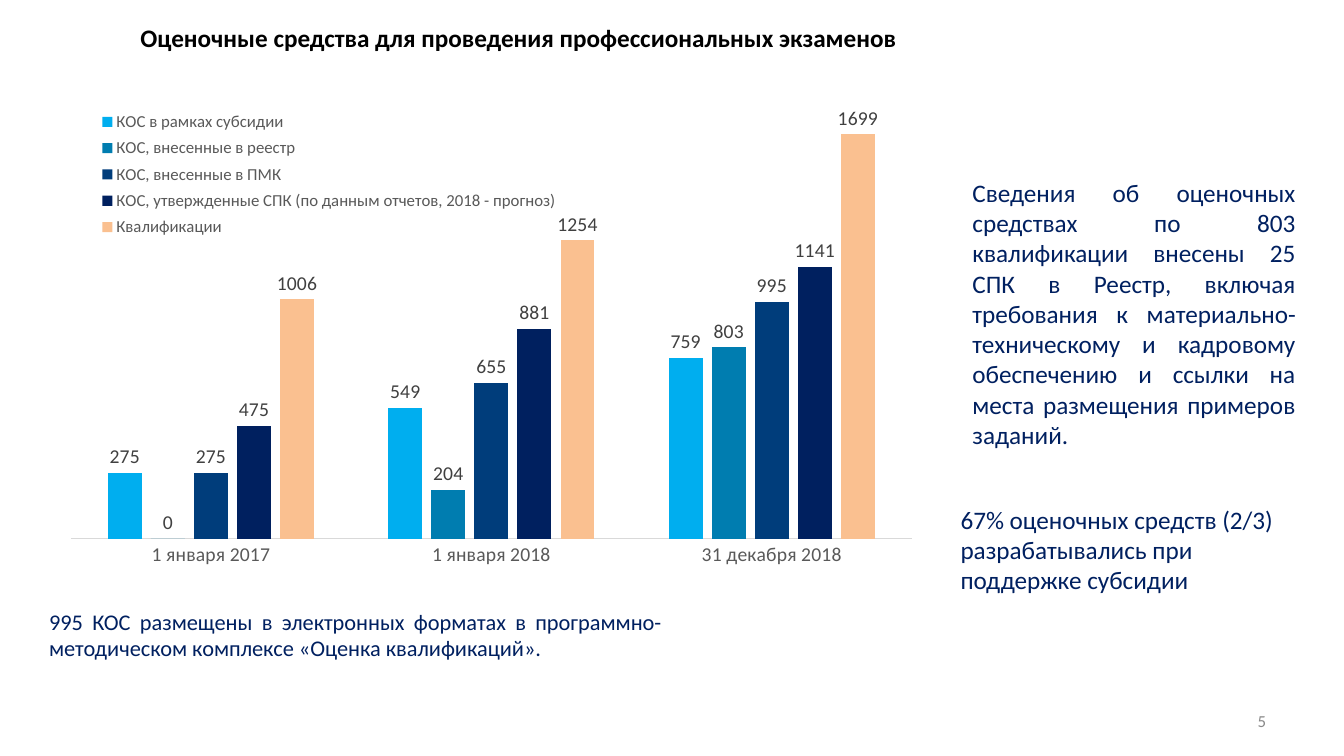
from lxml import etree
from pptx import Presentation
from pptx import util as u
from pptx.chart.data import CategoryChartData
from pptx.dml.color import RGBColor
from pptx.enum import chart as ch, text as t
from pptx.oxml.ns import qn

BLACK = RGBColor(0x00, 0x00, 0x00)
NAVY = RGBColor(0x00, 0x20, 0x60)
PAGE_GREY = RGBColor(0x89, 0x89, 0x89)
LABEL_GREY = RGBColor(0x40, 0x40, 0x40)
AXIS_GREY = RGBColor(0x59, 0x59, 0x59)
LINE_GREY = RGBColor(0xD9, 0xD9, 0xD9)
SKY = RGBColor(0x00, 0xAE, 0xEF)
TEAL = RGBColor(0x00, 0x7D, 0xB0)
BLUE = RGBColor(0x00, 0x3D, 0x7B)
DEEP = RGBColor(0x00, 0x20, 0x5F)
PEACH = RGBColor(0xFA, 0xC0, 0x90)

DATES = ["1 января 2017", "1 января 2018", "31 декабря 2018"]
TOOLS = [
    ("КОС в рамках субсидии", (275, 549, 759), SKY),
    ("КОС, внесенные в реестр", (0, 204, 803), TEAL),
    ("КОС, внесенные в ПМК", (275, 655, 995), BLUE),
    ("КОС, утвержденные СПК (по данным отчетов, 2018 - прогноз)", (475, 881, 1141), DEEP),
    ("Квалификации", (1006, 1254, 1699), PEACH),
]


class SlideBuilder:
    face = "Calibri"

    def __init__(self, slide):
        self.slide = slide

    def style(self, font, size, color, bold=False):
        font.name, font.size, font.bold = self.face, u.Pt(size), bold
        font.color.rgb = color

    def fill_text(self, holder, words, size, color, align, anchor, bold=False):
        frame = holder.text_frame
        frame.word_wrap = True
        frame.auto_size = t.MSO_AUTO_SIZE.NONE
        frame.vertical_anchor = anchor
        paragraph = frame.paragraphs[0]
        paragraph.alignment = align
        run = paragraph.add_run()
        run.text = words
        self.style(run.font, size, color, bold)

    def title(self, words, left, top, width, height):
        heading = self.slide.shapes.title
        heading.left, heading.top = u.Pt(left), u.Pt(top)
        heading.width, heading.height = u.Pt(width), u.Pt(height)
        self.fill_text(heading, words, 18, BLACK, t.PP_ALIGN.LEFT, t.MSO_ANCHOR.TOP, True)

    def note(self, words, left, top, width, height, size=18, color=NAVY,
             align=t.PP_ALIGN.JUSTIFY, anchor=t.MSO_ANCHOR.TOP):
        box = self.slide.shapes.add_textbox(*map(u.Pt, (left, top, width, height)))
        self.fill_text(box, words, size, color, align, anchor)

    def place(self, part, index, **fractions):
        for old in part.findall(qn("c:layout")):
            part.remove(old)
        layout = etree.Element(qn("c:layout"))
        part.insert(index, layout)
        manual = etree.SubElement(layout, qn("c:manualLayout"))
        if part.tag == qn("c:plotArea"):
            etree.SubElement(manual, qn("c:layoutTarget")).set("val", "inner")
        for mode in ("xMode", "yMode"):
            etree.SubElement(manual, qn(f"c:{mode}")).set("val", "edge")
        for key, value in fractions.items():
            etree.SubElement(manual, qn(f"c:{key}")).set("val", str(value))

    def columns(self, dates, tools, left, top, width, height):
        data = CategoryChartData()
        data.categories = dates
        for name, counts, _ in tools:
            data.add_series(name, counts)
        chart = self.slide.shapes.add_chart(
            ch.XL_CHART_TYPE.COLUMN_CLUSTERED,
            *map(u.Pt, (left, top, width, height)), data).chart
        chart.has_title = False
        self.style(chart.font, 10, BLACK)

        plot = chart.plots[0]
        plot.gap_width, plot.overlap, plot.vary_by_categories = 219, -27, False
        for series, (_, _, color) in zip(plot.series, tools):
            series.format.fill.solid()
            series.format.fill.fore_color.rgb = color
            labels = series.data_labels
            labels.show_value = True
            labels.position = ch.XL_LABEL_POSITION.OUTSIDE_END
            self.style(labels.font, 14, LABEL_GREY)

        counts_axis = chart.value_axis
        counts_axis.minimum_scale, counts_axis.maximum_scale = 0, 1800
        counts_axis.has_major_gridlines = False
        counts_axis.visible = False

        dates_axis = chart.category_axis
        dates_axis.major_tick_mark = ch.XL_TICK_MARK.NONE
        dates_axis.format.line.color.rgb = LINE_GREY
        dates_axis.format.line.width = u.Pt(0.75)
        self.style(dates_axis.tick_labels.font, 14, AXIS_GREY)

        chart.has_legend = True
        legend = chart.legend
        legend.position = ch.XL_LEGEND_POSITION.TOP
        legend.include_in_layout = True
        self.style(legend.font, 12, AXIS_GREY)
        self.place(chart.element.xpath(".//c:plotArea")[0], 0, x=0.02, y=0.02, w=0.96, h=0.9)
        self.place(chart.element.xpath(".//c:legend")[0], 1, x=0.04, y=0.01, w=0.55, h=0.29)


def main():
    deck = Presentation()
    deck.slide_width, deck.slide_height = u.Pt(960), u.Pt(540)
    page = SlideBuilder(deck.slides.add_slide(deck.slide_layouts[5]))
    page.title("Оценочные средства для проведения профессиональных экзаменов", 93, 12.5, 597.5, 29)
    page.columns(DATES, TOOLS, 38, 72, 626, 340)
    page.note("Сведения об оценочных средствах по 803 квалификации внесены 25 СПК в Реестр, "
              "включая требования к материально-техническому и кадровому обеспечению "
              "и ссылки на места размещения примеров заданий.", 687.5, 123, 245, 181.5)
    page.note("67% оценочных средств (2/3) разрабатывались при поддержке субсидии",
              679, 356.5, 262, 72.5, align=t.PP_ALIGN.LEFT)
    page.note("995 КОС размещены в электронных форматах в программно-методическом "
              "комплексе «Оценка квалификаций».", 28, 430.5, 452, 46, size=16)
    page.note("5", 687.5, 500.5, 224, 29, size=12, color=PAGE_GREY,
              align=t.PP_ALIGN.RIGHT, anchor=t.MSO_ANCHOR.MIDDLE)
    deck.save("out.pptx")


if __name__ == "__main__":
    main()
